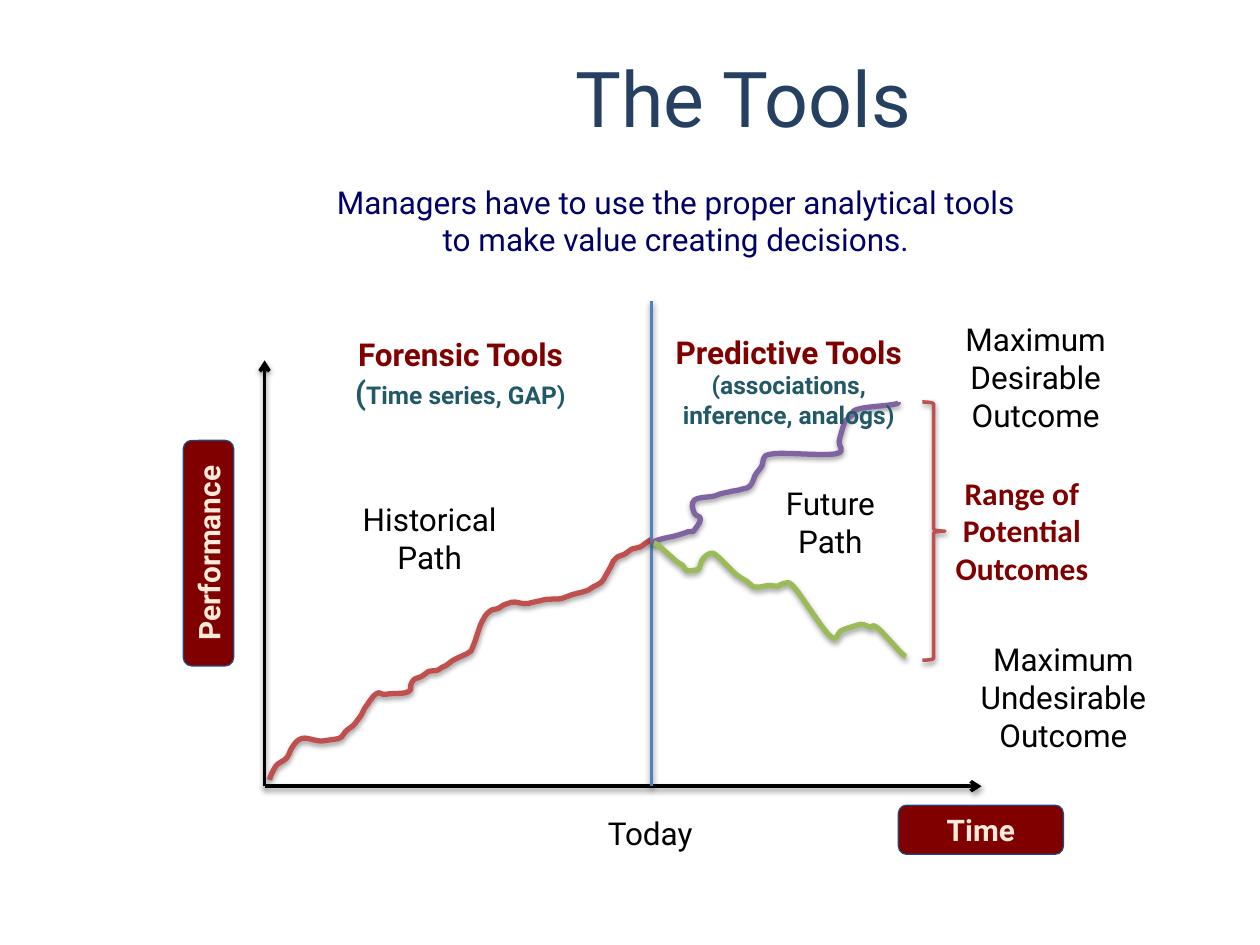
from lxml import etree
from pptx import Presentation
from pptx import util as u
from pptx.dml.color import RGBColor
from pptx.enum import shapes, text
from pptx.oxml.ns import qn

COLORS = {
    "title": "254061", "subtitle": "000066", "black": "000000",
    "maroon": "800000", "cream": "FDEADA", "teal": "215968",
    "navy": "1F497D", "blue": "4F81BD", "red": "C0504D",
    "purple": "8064A2", "green": "9BBB59",
}

# Steps in hundredths of an inch from the start of each path
HISTORY = [
    (0, 0), (5, -11), (14, -18), (18, -26), (26, -33), (43, -31), (57, -34),
    (60, -38), (68, -45), (74, -54), (79, -62), (82, -66), (86, -69),
    (93, -68), (110, -70), (112, -75), (114, -79), (122, -83), (126, -86),
    (135, -88), (143, -93), (158, -101), (161, -105), (164, -113),
    (167, -122), (171, -130), (175, -134), (183, -137), (192, -141),
    (205, -140), (218, -143), (232, -144), (240, -147), (251, -150),
    (255, -152), (265, -159), (272, -172), (275, -176), (283, -180),
    (287, -183), (296, -186), (303, -191),
]
DESIRABLE = [
    (0, 0), (7, -3), (20, -6), (29, -9), (34, -10), (39, -19), (34, -24),
    (34, -34), (52, -38), (63, -41), (69, -42), (78, -45), (82, -53),
    (88, -62), (89, -67), (98, -71), (147, -71), (149, -81), (153, -95),
    (156, -99), (160, -102), (163, -106), (192, -110), (196, -112),
]
UNDESIRABLE = [
    (0, 0), (6, 4), (16, 13), (23, 18), (27, 22), (36, 20), (38, 14), (46, 8),
    (59, 19), (68, 27), (73, 30), (80, 35), (89, 34), (99, 34), (104, 32),
    (112, 36), (140, 74), (148, 70), (162, 65), (167, 65), (172, 67),
    (177, 67), (196, 87), (200, 90),
]


def color(name):
    return RGBColor.from_string(COLORS[name])


def inside(box, left, top, width=0, height=0):
    """Turn a place relative to a box into slide lengths."""
    return [u.Inches(value) for value in (box[0] + left, box[1] + top, width, height)]


def style_line(shape, name, width):
    shape.line.color.rgb = color(name)
    shape.line.width = u.Pt(width)


def add_shadow(shape):
    effects = etree.SubElement(shape._element.spPr, qn("a:effectLst"))
    shadow = etree.SubElement(effects, qn("a:outerShdw"), blurRad="40000",
                              dist="20000", dir="5400000", rotWithShape="0")
    tone = etree.SubElement(shadow, qn("a:srgbClr"), val=COLORS["black"])
    etree.SubElement(tone, qn("a:alpha"), val="38000")


def style_font(font, size, name, bold, face="Roboto"):
    font.name, font.size, font.bold = face, u.Pt(size), bold
    font.color.rgb = color(name)


def add_text(page, place, paragraphs, font="Roboto"):
    """Each paragraph is a list of runs: words, size, colour, bold."""
    frame = page.shapes.add_textbox(*place).text_frame
    frame.word_wrap = True
    for index, spans in enumerate(paragraphs):
        para = frame.add_paragraph() if index else frame.paragraphs[0]
        para.alignment = text.PP_ALIGN.CENTER
        for words, size, name, bold in spans:
            for number, line in enumerate(words.split("\n")):
                if number:
                    para.add_line_break()
                span = para.add_run()
                span.text = line
                style_font(span.font, size, name, bold, font)
    return frame


def add_line(page, start, end, name, arrow=False):
    line = page.shapes.add_connector(shapes.MSO_CONNECTOR.STRAIGHT, *start[:2], *end[:2])
    style_line(line, name, 2)
    if arrow:
        etree.SubElement(line._element.spPr.find(qn("a:ln")), qn("a:tailEnd"), type="arrow")
    add_shadow(line)


def round_corners(path):
    """Turn the straight parts of a freeform into Bezier curves."""
    dots = [(int(dot.get("x")), int(dot.get("y"))) for dot in path._element.iter(qn("a:pt"))]
    ends = [dots[0], *dots, dots[-1]]
    segments = list(path._element.iter(qn("a:lnTo")))
    for segment, a, b, c, d in zip(segments, ends, ends[1:], ends[2:], ends[3:]):
        first = [q + (r - p) // 6 for p, q, r in zip(a, b, c)]
        second = [r - (s - q) // 6 for q, r, s in zip(b, c, d)]
        curve = etree.Element(qn("a:cubicBezTo"))
        for x, y in (first, second, c):
            etree.SubElement(curve, qn("a:pt"), x=str(x), y=str(y))
        segment.getparent().replace(segment, curve)


def add_path(page, start, points, name):
    builder = page.shapes.build_freeform(*points[0], scale=u.Inches(0.01))
    builder.add_line_segments(points[1:], close=False)
    path = builder.convert_to_shape(*start[:2])
    round_corners(path)
    path.fill.background()
    style_line(path, name, 3)
    add_shadow(path)


def add_button(page, place, words, rotation=0):
    button = page.shapes.add_shape(shapes.MSO_SHAPE.ROUNDED_RECTANGLE, *place)
    button.rotation = rotation
    button.shadow.inherit = False
    button.fill.solid()
    button.fill.fore_color.rgb = color("maroon")
    style_line(button, "navy", 0.75)
    frame = button.text_frame
    frame.text = words
    frame.vertical_anchor = text.MSO_ANCHOR.MIDDLE
    para = frame.paragraphs[0]
    para.alignment = text.PP_ALIGN.CENTER
    style_font(para.runs[0].font, 17, "cream", True)


def add_heading(page, box):
    title = add_text(page, inside(box, 0, 0, 9, 1.25), [[("The Tools", 44, "title", False)]])
    title.vertical_anchor = text.MSO_ANCHOR.MIDDLE
    title.margin_left = u.Inches(1.18)
    subtitle = ("Managers have to use the proper analytical tools "
                "to make value creating decisions.")
    add_text(page, inside(box, 1.62, 1.26, 5.77, 0.71), [[(subtitle, 18, "subtitle", False)]])


def add_chart_drawing(page, box):
    """Draw the axes, the three paths and the brace."""
    width, height = box[2:]
    today = 3.07
    add_button(page, inside(box, -1.34, 1.8, 1.79, 0.4), "Performance", 270)
    add_button(page, inside(box, 5.03, 4, 1.31, 0.39), "Time")
    origin = inside(box, 0, height)
    for end in (inside(box, width, height), inside(box, 0, 0.47)):
        add_line(page, origin, end, "black", arrow=True)
    add_path(page, inside(box, 0.04, 3.8), HISTORY, "red")
    add_line(page, inside(box, today, 0), inside(box, today, height), "blue")
    add_path(page, inside(box, today, 1.92), DESIRABLE, "purple")
    add_path(page, inside(box, today + 0.02, 1.92), UNDESIRABLE, "green")
    brace = page.shapes.add_shape(shapes.MSO_SHAPE.RIGHT_BRACE,
                                  *inside(box, 5.22, 0.8, 0.18, 2.05))
    brace.fill.background()
    style_line(brace, "red", 2)
    add_shadow(brace)


def add_chart_labels(page, box):
    plain_labels = [
        (2.25, 4.02, 0.4, ["Today"]),
        (5.31, 0.1, 1.01, ["Maximum", "Desirable Outcome"]),
        (5.53, 2.64, 1.01, ["Maximum Undesirable\nOutcome"]),
        (0.5, 1.53, 0.71, ["Historical\nPath"]),
        (3.68, 1.4, 0.71, ["Future", "Path"]),
    ]
    for left, top, height, lines in plain_labels:
        add_text(page, inside(box, left, top, 1.62, height),
                 [[(line, 18, "black", False)] for line in lines])
    add_text(page, inside(box, 3.1, 0.2, 2.12, 0.88), [
        [("Predictive Tools", 18, "maroon", True)],
        [("(associations, inference, analogs)", 14, "teal", True)]])
    add_text(page, inside(box, 0.5, 0.22, 2.11, 0.71), [
        [("Forensic Tools", 18, "maroon", True)],
        [("(", 18, "teal", True), ("Time series, GAP)", 14, "teal", True)]])
    add_text(page, inside(box, 5.2, 1.32, 1.62, 1.01),
             [[("Range of Potential Outcomes", 18, "maroon", True)]], "Calibri")


def main():
    deck = Presentation()
    deck.slide_width, deck.slide_height = u.Inches(10), u.Inches(7.5)
    page = deck.slides.add_slide(deck.slide_layouts[6])
    chart_box = (2.1, 2.39, 5.69, 3.85)
    add_heading(page, (0.86, 0.14, 9, 1.97))
    add_chart_drawing(page, chart_box)
    add_chart_labels(page, chart_box)
    deck.save("out.pptx")


if __name__ == "__main__":
    main()
